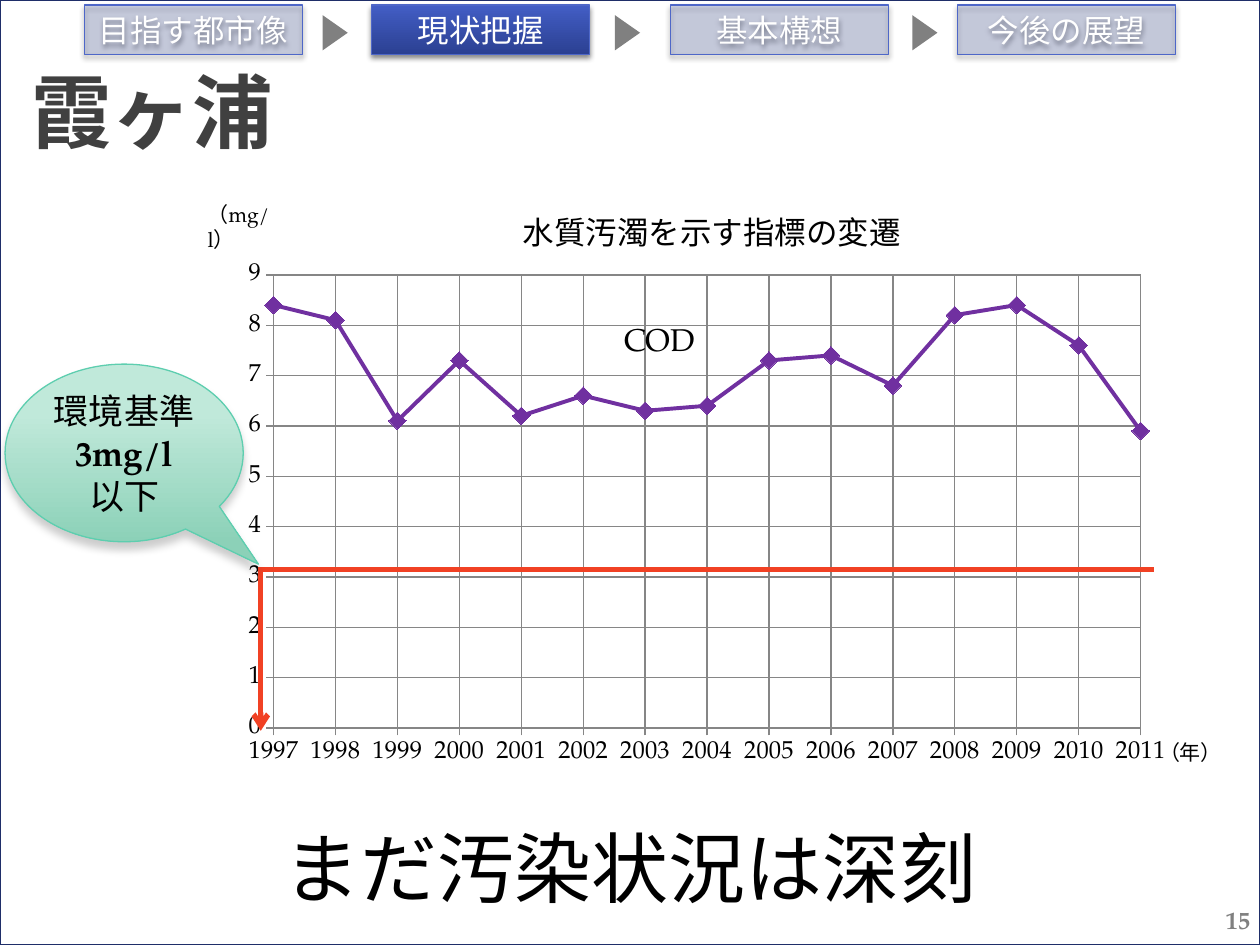
from lxml.etree import SubElement
from pptx import Presentation
from pptx.chart.data import CategoryChartData
from pptx.dml.color import RGBColor
from pptx.enum.chart import XL_CHART_TYPE, XL_MARKER_STYLE, XL_TICK_MARK
from pptx.enum.shapes import MSO_CONNECTOR, MSO_SHAPE
from pptx.enum.text import MSO_ANCHOR, PP_ALIGN
from pptx.oxml.ns import qn
from pptx.util import Inches, Pt

SERIF, SANS = "TeX Gyre Pagella", "Arial"
COLORS = {
    "white": "FFFFFF", "black": "000000", "title": "404040", "gray": "808080",
    "grid": "868686", "frame": "1F2E69", "nav_line": "4E67C8",
    "nav_top": "435EC5", "nav_bottom": "2B4092", "nav_pale": "31489F",
    "cod": "7030A0", "limit": "F14124",
    "mint_line": "5DCEAF", "mint_top": "C0E9DA", "mint_bottom": "8CD1B8",
}
COD = [8.4, 8.1, 6.1, 7.3, 6.2, 6.6, 6.3, 6.4, 7.3, 7.4, 6.8, 8.2, 8.4, 7.6, 5.9]


def rgb(name):
    return RGBColor.from_string(COLORS[name])


def style_font(font, size, color="black", name=SERIF, bold=False):
    font.size, font.name, font.bold = Pt(size), name, bold
    font.color.rgb = rgb(color)


def add_run(p, text, size, **style):
    r = p.add_run()
    r.text = text
    style_font(r.font, size, **style)


def add_text(s, box, text, size, align=PP_ALIGN.LEFT, anchor=MSO_ANCHOR.TOP,
             wrap=True, **style):
    tf = s.shapes.add_textbox(*map(Inches, box)).text_frame
    tf.word_wrap, tf.vertical_anchor = wrap, anchor
    p = tf.paragraphs[0]
    p.alignment = align
    add_run(p, text, size, **style)
    return tf


def add_shape(s, kind, box, fill, line=None, width=0.75):
    sp = s.shapes.add_shape(kind, *map(Inches, box))
    sp.shadow.inherit = False
    sp.fill.solid()
    sp.fill.fore_color.rgb = rgb(fill)
    if line:
        sp.line.color.rgb = rgb(line)
        sp.line.width = Pt(width)
    else:
        sp.line.fill.background()
    return sp


def set_alpha(fill_xml, percent):
    SubElement(fill_xml.find(".//" + qn("a:srgbClr")), qn("a:alpha"),
               val=str(percent * 1000))


def set_gradient(sp, top, bottom, start=0):
    sp.fill.gradient()
    sp.fill.gradient_angle = 270
    for stop, color, pos in zip(sp.fill.gradient_stops, (top, bottom), (start, 1)):
        stop.color.rgb = rgb(color)
        stop.position = pos


def add_shadow(sp, blur, dist, percent):
    effects = sp._element.spPr.find(qn("a:effectLst"))
    shadow = SubElement(effects, qn("a:outerShdw"), blurRad=str(Pt(blur)),
                        dist=str(Pt(dist)), dir="5400000", rotWithShape="0")
    color = SubElement(shadow, qn("a:srgbClr"), val=COLORS["black"])
    SubElement(color, qn("a:alpha"), val=str(percent * 1000))


def add_navigation(s, top, current):
    steps = {"目指す都市像": 0.67, "現状把握": 2.95, "基本構想": 5.32, "今後の展望": 7.6}
    for label, left in steps.items():
        sp = add_shape(s, MSO_SHAPE.RECTANGLE, (left, top, 1.73, 0.39),
                       "nav_pale", "nav_line")
        if label == current:
            set_gradient(sp, "nav_top", "nav_bottom")
        else:
            set_alpha(sp._element.spPr.find(qn("a:solidFill")), 20)
        add_shadow(sp, 3.1, 1.8, 45)
        tf = sp.text_frame
        tf.word_wrap = False
        tf.vertical_anchor = MSO_ANCHOR.MIDDLE
        p = tf.paragraphs[0]
        p.alignment = PP_ALIGN.CENTER
        add_run(p, label, 18, color="white", name=SANS)
    for left in (2.52, 4.84, 7.2):
        sp = add_shape(s, MSO_SHAPE.ISOSCELES_TRIANGLE,
                       (left, top + 0.12, 0.28, 0.2), "gray")
        sp.rotation = 90


def set_layout(parent, index, **values):
    """Give a chart title or plot area a fixed place, in shares of the chart."""
    for old in parent.findall(qn("c:layout")):
        parent.remove(old)
    layout = SubElement(parent, qn("c:layout"))
    parent.insert(index, layout)
    manual = SubElement(layout, qn("c:manualLayout"))
    if "w" in values:
        SubElement(manual, qn("c:layoutTarget"), val="inner")
    for key in ("xMode", "yMode"):
        SubElement(manual, qn("c:" + key), val="edge")
    for key, value in values.items():
        SubElement(manual, qn("c:" + key), val=str(value))


def put_points_on_gridlines(value_axis_xml):
    for old in value_axis_xml.findall(qn("c:crossBetween")):
        value_axis_xml.remove(old)
    cross = SubElement(value_axis_xml, qn("c:crossBetween"), val="midCat")
    value_axis_xml.find(qn("c:crosses")).addnext(cross)


def style_axis(axis):
    axis.has_major_gridlines = True
    axis.major_tick_mark = XL_TICK_MARK.OUTSIDE
    style_font(axis.tick_labels.font, 14)
    for line in (axis.format.line, axis.major_gridlines.format.line):
        line.color.rgb = rgb("grid")
        line.width = Pt(0.75)


def add_cod_chart(s, left, top, width, height):
    data = CategoryChartData()
    data.categories = [str(1997 + i) for i in range(len(COD))]
    data.add_series("COD", COD)
    chart = s.shapes.add_chart(XL_CHART_TYPE.LINE_MARKERS,
                               *map(Inches, (left, top, width, height)), data).chart
    chart.has_legend = False
    style_font(chart.font, 10)
    chart.has_title = True
    add_run(chart.chart_title.text_frame.paragraphs[0], "水質汚濁を示す指標の変遷", 18)
    set_layout(chart.chart_title._element, 1, x=0.3, y=0.05)
    plot_area = chart._chartSpace.chart.plotArea
    set_layout(plot_area, 0, x=0.045, y=0.176, w=0.908, h=0.743)

    style_axis(chart.category_axis)
    style_axis(chart.value_axis)
    chart.value_axis.minimum_scale, chart.value_axis.maximum_scale = 0, 9
    chart.value_axis.major_unit = 1
    put_points_on_gridlines(plot_area.find(qn("c:valAx")))

    chart.plots[0].vary_by_categories = False
    series = chart.plots[0].series[0]
    series.smooth = False
    series.format.line.color.rgb = rgb("cod")
    series.format.line.width = Pt(2.25)
    series.marker.style, series.marker.size = XL_MARKER_STYLE.DIAMOND, 10
    series.marker.format.fill.solid()
    series.marker.format.fill.fore_color.rgb = rgb("cod")
    series.marker.format.line.color.rgb = rgb("cod")

    add_text(s, (left - 0.28, top + 0.22, 0.88, 0.3), "（mg/l）", 12)
    add_text(s, (left + 7.27, top + 4.49, 0.71, 0.3), "（年）", 12, wrap=False)
    add_text(s, (left + 3.03, top + 1.16, 0.77, 0.4), "COD", 18, wrap=False)


def add_limit_line(s, start, end, arrow=False):
    c = s.shapes.add_connector(MSO_CONNECTOR.STRAIGHT, *map(Inches, start + end))
    c.line.color.rgb = rgb("limit")
    c.line.width = Pt(3)
    if arrow:
        SubElement(c.line._get_or_add_ln(), qn("a:tailEnd"), type="arrow")
    SubElement(c._element.spPr, qn("a:effectLst"))


def add_limit_callout(s, box):
    sp = add_shape(s, MSO_SHAPE.OVAL_CALLOUT, box, "mint_top", "mint_line")
    sp.adjustments[0], sp.adjustments[1] = 0.564, 0.626
    set_gradient(sp, "mint_top", "mint_bottom", start=0.28)
    add_shadow(sp, 5, 4, 20)
    tf = sp.text_frame
    tf.word_wrap, tf.vertical_anchor = True, MSO_ANCHOR.MIDDLE
    for i, text in enumerate(("環境基準", "3mg/l", "以下")):
        p = tf.add_paragraph() if i else tf.paragraphs[0]
        p.alignment = PP_ALIGN.CENTER
        add_run(p, text, 20, bold=text == "3mg/l")


def main():
    prs = Presentation()
    prs.slide_width, prs.slide_height = Inches(10), Inches(7.5)
    s = prs.slides.add_slide(prs.slide_layouts[6])

    add_shape(s, MSO_SHAPE.RECTANGLE, (0, 0, 10, 7.5), "white", "frame", 1.25)
    add_navigation(s, 0.04, "現状把握")
    title = add_text(s, (0, 0.44, 10, 1.25), "霞ヶ浦", 46, color="title", bold=True)
    title.margin_left = Inches(0.25)
    add_cod_chart(s, 1.83, 1.33, 7.58, 4.84)
    add_limit_line(s, (2.07, 4.52), (9.16, 4.52))
    add_limit_line(s, (2.07, 4.5), (2.07, 5.8), arrow=True)
    add_limit_callout(s, (0.04, 2.89, 1.89, 1.41))
    add_text(s, (0, 6.46, 10, 0.84), "まだ汚染状況は深刻", 44, PP_ALIGN.CENTER)
    add_text(s, (8.02, 7.1, 2, 0.4), "15", 14, PP_ALIGN.RIGHT, MSO_ANCHOR.MIDDLE,
             color="gray", bold=True)
    prs.save("out.pptx")


if __name__ == "__main__":
    main()
